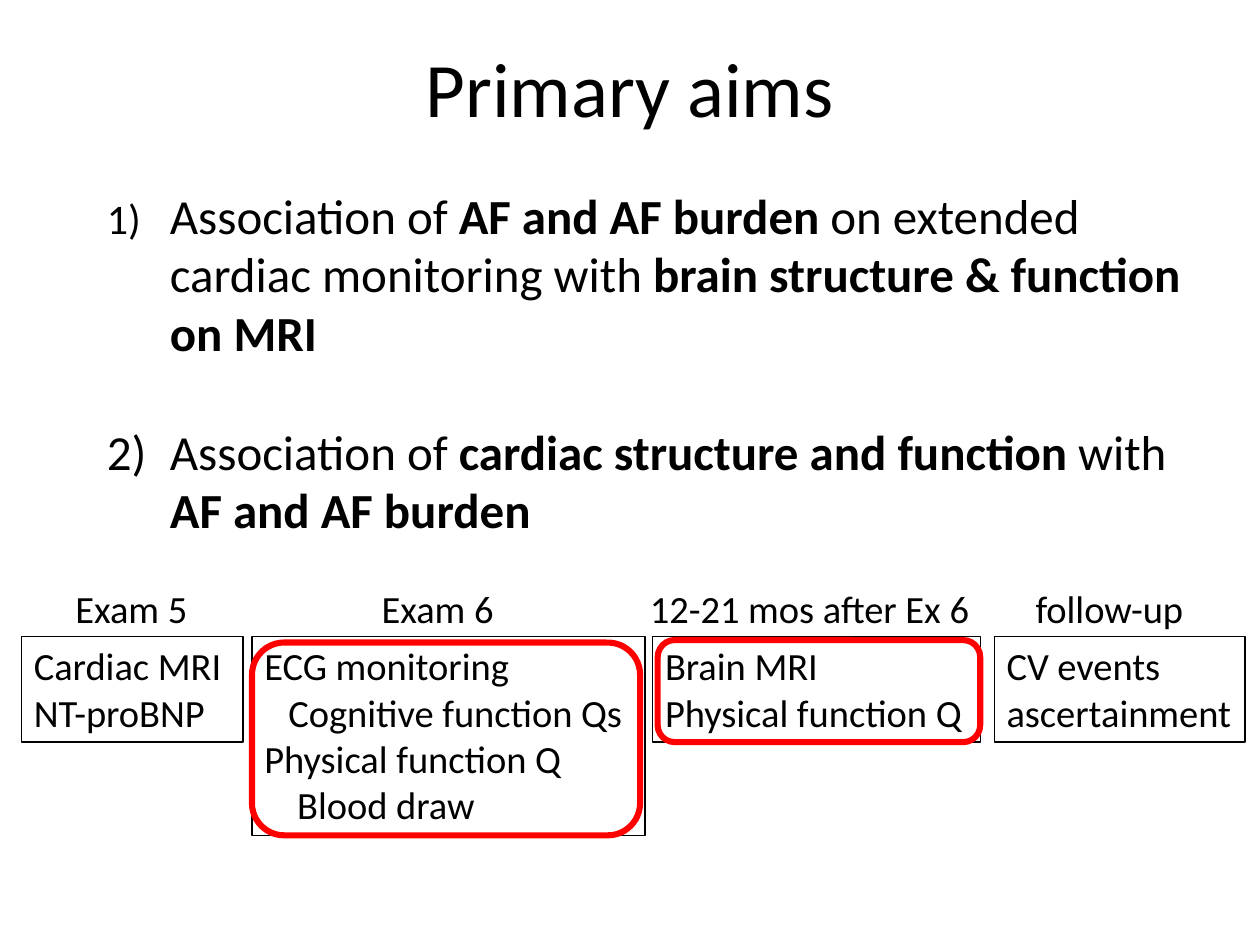
from lxml.etree import SubElement
from pptx import Presentation
from pptx.dml.color import RGBColor
from pptx.enum.shapes import MSO_SHAPE as Shape
from pptx.enum.text import MSO_ANCHOR as Anchor, MSO_AUTO_SIZE as AutoSize, PP_ALIGN as Align
from pptx.oxml.ns import qn
from pptx.util import Inches, Pt

BLACK = RGBColor(0, 0, 0)
RED = RGBColor(255, 0, 0)
FONT = "Calibri"
SMALL, BODY, TITLE = 22, 28, 44

# Each aim: (text, size, bold) runs
AIMS = [
    [("1)\t", 24, False), ("Association of ", BODY, False), ("AF and AF burden", BODY, True),
     (" on extended cardiac monitoring with ", BODY, False),
     ("brain structure & function on MRI", BODY, True)],
    [("2)\tAssociation of ", BODY, False), ("cardiac structure and function", BODY, True),
     (" with ", BODY, False), ("AF and AF burden", BODY, True)],
]

# Heading and its tab stop within the heading line
HEADINGS = [("Exam 5", 0), ("Exam 6", 2.43), ("12-21 mos after Ex 6", 4.56), ("follow-up", 7.62)]

# Left, width and (text, left margin) lines of each visit box
VISITS = [
    (0.17, 1.76, [("Cardiac MRI", 0), ("NT-proBNP", 0)]),
    (2, 3.12, [("ECG monitoring", 0), ("Cognitive function Qs", 0.19),
               ("Physical function Q", 0), ("Blood draw", 0.26)]),
    (5.18, 2.6, [("Brain MRI", 0), ("Physical function Q", 0)]),
    (7.89, 1.99, [("CV events ascertainment", 0)]),
]
BOX_TOP, LINE_HEIGHT, PADDING = 5.05, 0.37, 0.1
BOX_HEIGHTS = {1: 2, 2: 2, 4: 4}  # paragraphs -> lines after wrapping

HIGHLIGHTS = [(2, 5.1, 3.08, 1.53), (5.22, 5.08, 2.56, 0.81)]


def add_run(p, text, size, bold=False):
    r = p.add_run()
    r.text = text
    r.font.name, r.font.size, r.font.bold = FONT, Pt(size), bold
    r.font.color.rgb = BLACK


def set_indent(p, left, first=0):
    pPr = p._p.get_or_add_pPr()
    pPr.set("marL", str(Inches(left)))
    pPr.set("indent", str(Inches(first)))


def add_text(slide, *box):
    tf = slide.shapes.add_textbox(*map(Inches, box)).text_frame
    tf.word_wrap = True
    return tf


def add_outline(slide, kind, box, color, width):
    s = slide.shapes.add_shape(kind, *map(Inches, box))
    s.shadow.inherit = False
    s.fill.background()
    s.line.color.rgb, s.line.width = color, Pt(width)
    return s


def paragraphs(tf, items):
    """Yield each item with its own paragraph."""
    for i, item in enumerate(items):
        yield (tf.add_paragraph() if i else tf.paragraphs[0]), item


def add_visit(slide, left, width, lines):
    height = BOX_HEIGHTS[len(lines)] * LINE_HEIGHT + PADDING
    s = add_outline(slide, Shape.RECTANGLE, (left, BOX_TOP, width, height), BLACK, 0.75)
    tf = s.text_frame
    tf.word_wrap, tf.vertical_anchor = True, Anchor.TOP
    tf.auto_size = AutoSize.SHAPE_TO_FIT_TEXT
    for p, (text, margin) in paragraphs(tf, lines):
        p.alignment = Align.LEFT
        set_indent(p, margin)
        add_run(p, text, SMALL)


def add_headings(slide):
    p = add_text(slide, 0.5, 4.59, 9.19, 0.47).paragraphs[0]
    tabs = SubElement(p._p.get_or_add_pPr(), qn("a:tabLst"))
    for _, stop in HEADINGS[1:]:
        SubElement(tabs, qn("a:tab"), pos=str(Inches(stop)), algn="l")
    add_run(p, "\t".join(name for name, _ in HEADINGS), SMALL)


def add_aims(slide):
    tf = add_text(slide, 0.25, 1.42, 9.42, 2.93)
    for p, runs in paragraphs(tf, AIMS):
        set_indent(p, 1, -0.5)
        for run in runs:
            add_run(p, *run)
    tf.paragraphs[1].space_before = Pt(34)


def add_title(slide):
    tf = add_text(slide, 0.5, 0.28, 9, 0.81)
    tf.vertical_anchor = Anchor.MIDDLE
    tf.paragraphs[0].alignment = Align.CENTER
    add_run(tf.paragraphs[0], "Primary aims", TITLE)


def main():
    prs = Presentation()
    prs.slide_width, prs.slide_height = Inches(10), Inches(7.5)
    slide = prs.slides.add_slide(prs.slide_layouts[6])
    for visit in VISITS:
        add_visit(slide, *visit)
    add_headings(slide)
    add_aims(slide)
    add_title(slide)
    for box in HIGHLIGHTS:
        add_outline(slide, Shape.ROUNDED_RECTANGLE, box, RED, 3.5)
    prs.save("out.pptx")


if __name__ == "__main__":
    main()
